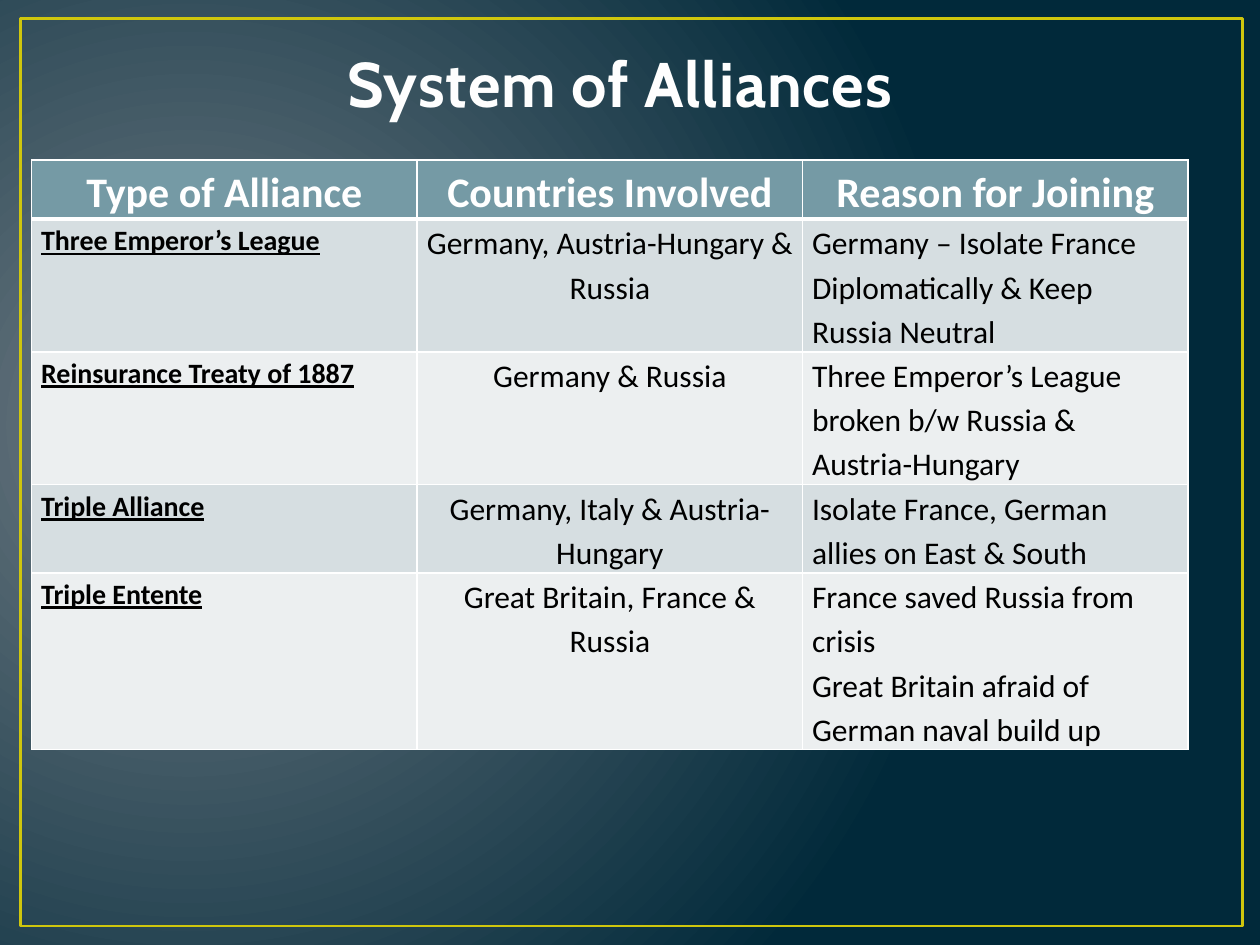
import dataclasses

import pptx
import pptx.dml.color
import pptx.enum.dml
import pptx.enum.shapes
import pptx.enum.text
import pptx.oxml
import pptx.oxml.ns
import pptx.presentation
import pptx.slide
import pptx.table
import pptx.util

Cm = pptx.util.Cm
Pt = pptx.util.Pt
Align = pptx.enum.text.PP_ALIGN


@dataclasses.dataclass(frozen=True)
class Theme:
    glow: str = "717C84"
    night: str = "01293A"
    frame: str = "CFC60D"
    title: str = "FEFEFE"
    title_outline: str = "384F55"
    header_fill: str = "759AA5"
    band_fills: tuple[str, str] = ("D6DEE1", "ECEFF0")
    border: str = "FFFFFF"
    title_font: str = "Cabin"
    table_font: str = "Calibri"
    title_size: int = 36


@dataclasses.dataclass(frozen=True)
class CellStyle:
    size: int
    color: str
    align: Align
    bold: bool = False
    underline: bool = False


@dataclasses.dataclass(frozen=True)
class Alliance:
    name: str
    countries: str
    reasons: tuple[str, ...]
    height: float


THEME = Theme()
HEADER_STYLE = CellStyle(24, "FFFFFF", Align.CENTER, bold=True)
COLUMN_STYLES = (
    CellStyle(16, "000000", Align.LEFT, bold=True, underline=True),
    CellStyle(18, "000000", Align.CENTER),
    CellStyle(18, "000000", Align.LEFT),
)
HEADERS = ("Type of Alliance", "Countries Involved", "Reason for Joining")
HEADER_HEIGHT = 1.18
COLUMN_WIDTH = 7.77
ALLIANCES = (
    Alliance("Three Emperor’s League", "Germany, Austria-Hungary & Russia",
             ("Germany – Isolate France Diplomatically & Keep Russia Neutral",), 2.66),
    Alliance("Reinsurance Treaty of 1887", "Germany & Russia",
             ("Three Emperor’s League broken b/w Russia & Austria-Hungary",), 2.66),
    Alliance("Triple Alliance", "Germany, Italy & Austria-Hungary",
             ("Isolate France, German allies on East & South",), 1.77),
    Alliance("Triple Entente", "Great Britain, France & Russia",
             ("France saved Russia from crisis",
              "Great Britain afraid of German naval build up"), 3.55),
)


def rgb(color: str) -> pptx.dml.color.RGBColor:
    return pptx.dml.color.RGBColor.from_string(color)


def line_xml(tag: str, color: str, points: float):
    return pptx.oxml.parse_xml(
        f'<a:{tag} {pptx.oxml.ns.nsdecls("a")} w="{Pt(points)}">'
        f'<a:solidFill><a:srgbClr val="{color}"/></a:solidFill></a:{tag}>'
    )


def paint_background(slide: pptx.slide.Slide) -> None:
    """Fill the background with a glow that spreads from the left."""
    fill = slide.background.fill
    fill.gradient()
    for stop, color in zip(fill.gradient_stops, (THEME.glow, THEME.night)):
        stop.color.rgb = rgb(color)
    gradient = slide.element.xpath(".//a:gradFill")[0]
    for linear in gradient.xpath("a:lin"):
        gradient.remove(linear)
    gradient.append(pptx.oxml.parse_xml(
        f'<a:path {pptx.oxml.ns.nsdecls("a")} path="circle">'
        '<a:fillToRect l="15000" t="50000" r="85000" b="60000"/></a:path>'
    ))


def add_frame(slide: pptx.slide.Slide) -> None:
    frame = slide.shapes.add_shape(
        pptx.enum.shapes.MSO_SHAPE.RECTANGLE, Cm(0.41), Cm(0.38), Cm(24.64), Cm(18.29)
    )
    frame.shadow.inherit = False
    frame.fill.background()
    frame.line.color.rgb = rgb(THEME.frame)
    frame.line.width = Pt(1.5)
    slide.shapes.title.element.addprevious(frame.element)


def fill_title(slide: pptx.slide.Slide, text: str) -> None:
    title = slide.shapes.title
    title.left, title.top, title.width, title.height = Cm(1.07), Cm(-0.64), Cm(22.86), Cm(3.18)
    title.text_frame.vertical_anchor = pptx.enum.text.MSO_ANCHOR.BOTTOM
    paragraph = title.text_frame.paragraphs[0]
    paragraph.alignment = Align.CENTER
    run = paragraph.add_run()
    run.text = text
    font = run.font
    font.name, font.size, font.bold = THEME.title_font, Pt(THEME.title_size), True
    font.color.rgb = rgb(THEME.title)
    properties = title.element.xpath(".//a:r/a:rPr")[0]
    properties.set("spc", "50")
    properties.insert(0, line_xml("ln", THEME.title_outline, 1.05))


def fill_cell(cell: pptx.table._Cell, lines: tuple[str, ...], style: CellStyle,
              fill: str, top: float = 1, bottom: float = 1) -> None:
    """Write one paragraph per line; top and bottom are border widths in points."""
    cell.margin_left = cell.margin_right = Cm(0.19)
    cell.margin_top = cell.margin_bottom = 0
    cell.fill.solid()
    cell.fill.fore_color.rgb = rgb(fill)
    cell.text = "\n".join(lines)
    for paragraph in cell.text_frame.paragraphs:
        paragraph.alignment = style.align
        paragraph.line_spacing = 1.15
        font = paragraph.font
        font.name, font.size = THEME.table_font, Pt(style.size)
        font.bold, font.underline = style.bold, style.underline
        font.color.rgb = rgb(style.color)
    properties = cell.fill._xPr
    borders = (("lnL", 1), ("lnR", 1), ("lnT", top), ("lnB", bottom))
    for position, (tag, points) in enumerate(borders):
        properties.insert(position, line_xml(tag, THEME.border, points))


def add_alliance_table(slide: pptx.slide.Slide) -> None:
    heights = [HEADER_HEIGHT, *(alliance.height for alliance in ALLIANCES)]
    table = slide.shapes.add_table(
        len(heights), len(HEADERS), Cm(0.64), Cm(3.23),
        Cm(COLUMN_WIDTH * len(HEADERS)), Cm(sum(heights))
    ).table
    for column in table.columns:
        column.width = Cm(COLUMN_WIDTH)
    for row, height in zip(table.rows, heights):
        row.height = Cm(height)
    for column, header in enumerate(HEADERS):
        fill_cell(table.cell(0, column), (header,), HEADER_STYLE, THEME.header_fill, bottom=3)
    for row, alliance in enumerate(ALLIANCES, start=1):
        contents = ((alliance.name,), (alliance.countries,), alliance.reasons)
        for column, (lines, style) in enumerate(zip(contents, COLUMN_STYLES)):
            fill_cell(table.cell(row, column), lines, style,
                      THEME.band_fills[(row - 1) % 2], top=3 if row == 1 else 1)


def main() -> None:
    presentation = pptx.Presentation()
    presentation.slide_width, presentation.slide_height = Cm(25.4), Cm(19.05)
    slide = presentation.slides.add_slide(presentation.slide_layouts.get_by_name("Title Only"))
    paint_background(slide)
    fill_title(slide, "System of Alliances")
    add_frame(slide)
    add_alliance_table(slide)
    presentation.save("out.pptx")


if __name__ == "__main__":
    main()
